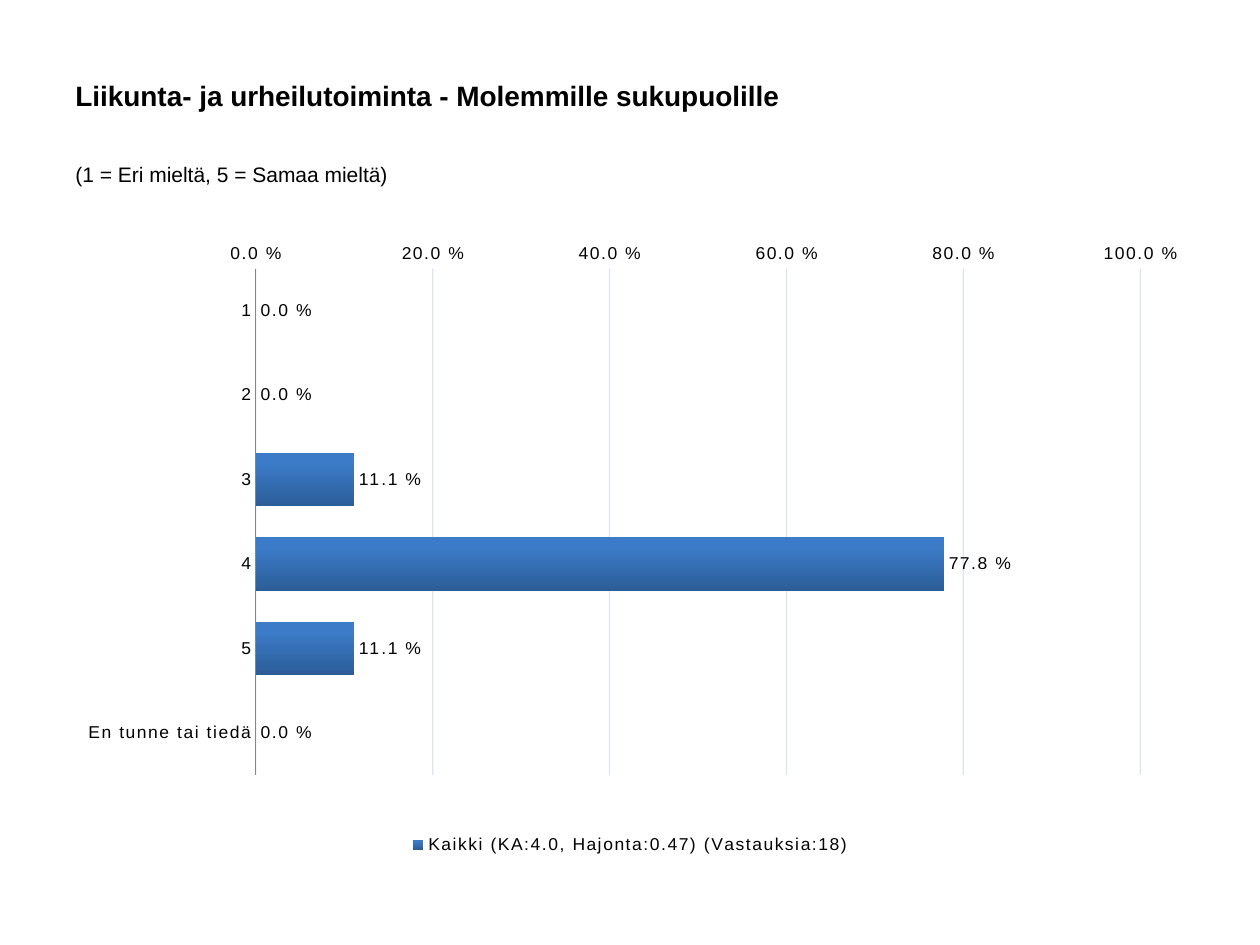
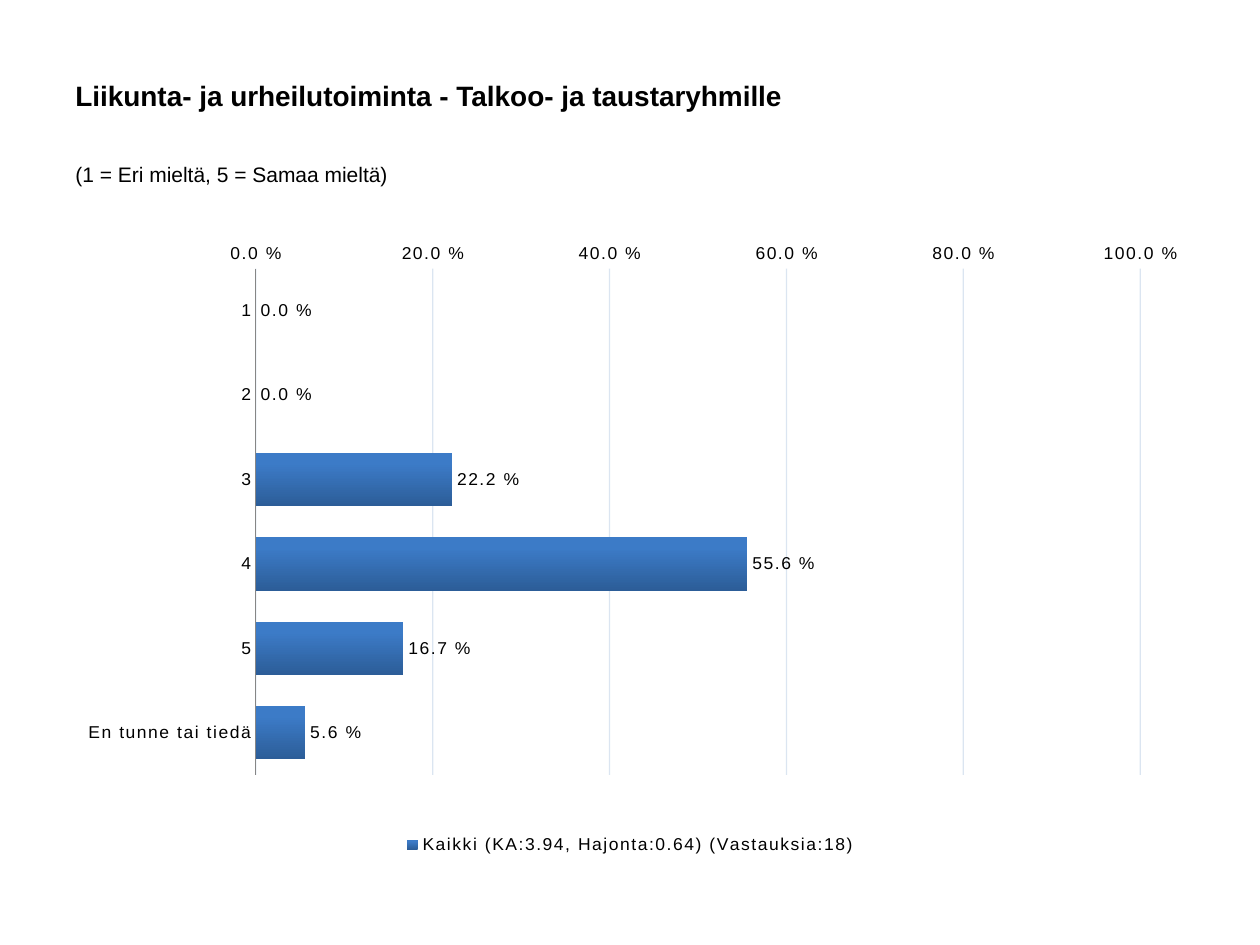
from lxml import etree
from pptx import Presentation
from pptx.chart.data import CategoryChartData
from pptx.dml.color import RGBColor
from pptx.enum.chart import (XL_AXIS_CROSSES, XL_CHART_TYPE, XL_LABEL_POSITION,
                             XL_LEGEND_POSITION, XL_TICK_MARK)
from pptx.enum.text import MSO_ANCHOR
from pptx.oxml import parse_xml
from pptx.oxml.ns import nsdecls, qn
from pptx.util import Inches, Pt

BAR_CLUSTERED = XL_CHART_TYPE.BAR_CLUSTERED
AT_MAXIMUM = XL_AXIS_CROSSES.MAXIMUM
OUTSIDE_END = XL_LABEL_POSITION.OUTSIDE_END
LEGEND_BOTTOM = XL_LEGEND_POSITION.BOTTOM
NO_TICK = XL_TICK_MARK.NONE
TOP, MIDDLE = MSO_ANCHOR.TOP, MSO_ANCHOR.MIDDLE

BLACK = RGBColor(0x00, 0x00, 0x00)
AXIS_GREY = RGBColor(0x86, 0x86, 0x86)
GRID_BLUE = RGBColor(0x4F, 0x81, 0xBD)
BAR_STOPS = [(0, RGBColor(0x2C, 0x5D, 0x98)), (0.8, RGBColor(0x3C, 0x7B, 0xC7))]

# Boxes: left, top, width, height in inches
TITLE_BOX = (0.5, 0.36, 9, 0.79)
SCALE_BOX = (0.5, 1.23, 9, 0.59)
CHART_BOX = (0.5, 1.94, 9, 4.88)
PLOT_LAYOUT = {"x": 0.17, "y": 0.02, "w": 0.78, "h": 0.84}

TITLE_FONT = {"name": "Arial", "size": Pt(16), "bold": True}
SCALE_FONT = {"name": "Arial", "size": Pt(12)}
CHART_FONT = {"name": "Arial", "size": Pt(10), "bold": False}
LETTER_SPACING = "100"
PERCENT = "0.0\\ %"

SCALE = "(1 = Eri mieltä, 5 = Samaa mieltä)"
ANSWERS = ["1", "2", "3", "4", "5", "En tunne tai tiedä"]
QUESTIONS = [
    ("Molemmille sukupuolille", "KA:4.0, Hajonta:0.47",
     [0, 0, 0.111, 0.778, 0.111, 0]),
    ("Talkoo- ja taustaryhmille", "KA:3.94, Hajonta:0.64",
     [0, 0, 0.222, 0.556, 0.167, 0.056]),
]


def set_font(font, values):
    for name, value in values.items():
        setattr(font, name, value)
    font.color.rgb = BLACK


def add_text(s, box, text, font, anchor=TOP, space_before=0):
    tf = s.shapes.add_textbox(*map(Inches, box)).text_frame
    tf.word_wrap = True
    tf.vertical_anchor = anchor
    p = tf.paragraphs[0]
    p.space_before = Pt(space_before)
    r = p.add_run()
    r.text = text
    set_font(r.font, font)


def style_axes(chart):
    answers, share = chart.category_axis, chart.value_axis
    for axis in (answers, share):
        axis.major_tick_mark = axis.minor_tick_mark = NO_TICK
        set_font(axis.tick_labels.font, CHART_FONT)

    # First answer on top, percentages along the bottom
    answers.reverse_order = True
    answers.crosses = AT_MAXIMUM
    answers.format.line.color.rgb = AXIS_GREY

    share.minimum_scale, share.maximum_scale, share.major_unit = 0, 1, 0.2
    share.tick_labels.number_format = PERCENT
    share.tick_labels.number_format_is_linked = False
    share.format.line.fill.background()
    grid = share.major_gridlines.format.line
    grid.width = Pt(0.75)
    grid.color.rgb = GRID_BLUE
    color = share.major_gridlines._xAx.find(".//" + qn("c:majorGridlines")).find(
        ".//" + qn("a:srgbClr"))
    etree.SubElement(color, qn("a:alpha"), val="20000")


def style_bars(plot):
    plot.gap_width = 58
    plot.vary_by_categories = False
    fill = plot.series[0].format.fill
    fill.gradient()
    fill.gradient_angle = 90
    for stop, (position, color) in zip(fill.gradient_stops, BAR_STOPS):
        stop.position = position
        stop.color.rgb = color
    plot.series[0].format.line.fill.background()

    plot.has_data_labels = True
    labels = plot.data_labels
    labels.show_value = True
    labels.position = OUTSIDE_END
    labels.number_format = PERCENT
    labels.number_format_is_linked = False
    set_font(labels.font, CHART_FONT)


def set_plot_layout(chart):
    plot_area = chart._chartSpace.find(".//" + qn("c:plotArea"))
    for old in plot_area.findall(qn("c:layout")):
        plot_area.remove(old)
    sizes = "".join(f'<c:{k} val="{v}"/>' for k, v in PLOT_LAYOUT.items())
    plot_area.insert(0, parse_xml(
        f'<c:layout {nsdecls("c")}><c:manualLayout><c:layoutTarget val="inner"/>'
        f'<c:xMode val="edge"/><c:yMode val="edge"/>{sizes}'
        '</c:manualLayout></c:layout>'))


def add_answer_chart(s, box, series_name, shares):
    data = CategoryChartData(number_format=PERCENT)
    data.categories = ANSWERS
    data.add_series(series_name, shares)
    chart = s.shapes.add_chart(BAR_CLUSTERED, *map(Inches, box), data).chart
    chart.has_title = False
    set_font(chart.font, {**CHART_FONT, "name": "Calibri"})
    style_axes(chart)
    style_bars(chart.plots[0])

    chart.has_legend = True
    chart.legend.position = LEGEND_BOTTOM
    chart.legend.include_in_layout = False
    set_font(chart.legend.font, CHART_FONT)
    set_plot_layout(chart)
    for props in chart._chartSpace.iter(qn("a:defRPr")):
        props.set("spc", LETTER_SPACING)


def add_question_slide(prs, group, stats, shares):
    s = prs.slides.add_slide(prs.slide_layouts[6])
    add_text(s, TITLE_BOX, f"Liikunta- ja urheilutoiminta - {group}",
             TITLE_FONT, MIDDLE)
    add_text(s, SCALE_BOX, SCALE, SCALE_FONT, space_before=2.4)
    add_answer_chart(s, CHART_BOX, f"Kaikki ({stats}) (Vastauksia:18)", shares)


def main():
    prs = Presentation()
    prs.slide_width, prs.slide_height = Inches(10), Inches(7.5)
    for question in QUESTIONS:
        add_question_slide(prs, *question)
    prs.save("out.pptx")


if __name__ == "__main__":
    main()
